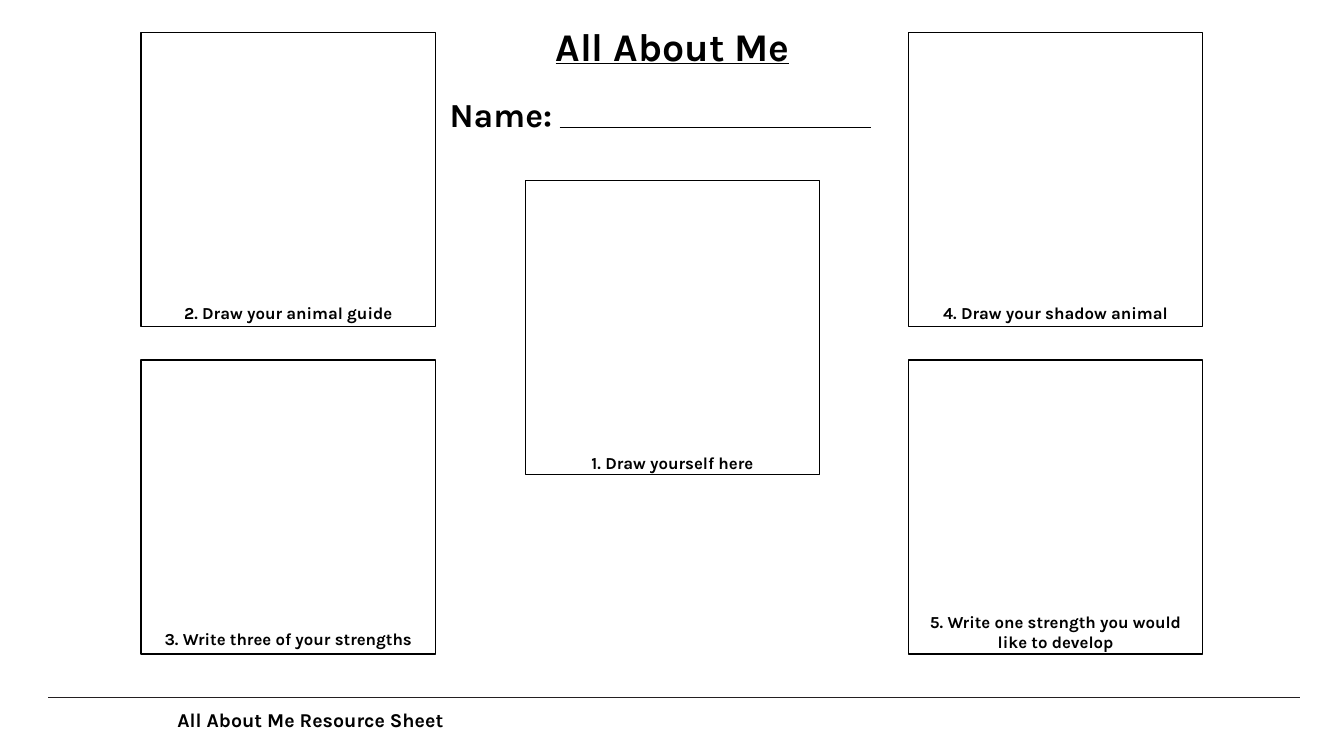
from lxml.etree import SubElement
from pptx import Presentation
from pptx.dml.color import RGBColor
from pptx.enum.shapes import MSO_CONNECTOR, MSO_SHAPE
from pptx.enum.text import MSO_AUTO_SIZE, PP_ALIGN
from pptx.oxml.ns import qn
from pptx.util import Pt

PX = 9144  # 100 px to the inch
COLORS = {"ink": "000000", "rule": "231F20", "paper": "FFFFFF"}
FONT = "Karla"
SIDE = 292  # every panel is a square, and text boxes share its width


def px(*lengths):
    return [n * PX for n in lengths]


def color(name):
    return RGBColor.from_string(COLORS[name])


def add_text(s, text, x, y, h, size=12, underline=None):
    tf = s.shapes.add_textbox(*px(x, y, SIDE, h)).text_frame
    tf.word_wrap = True
    tf.auto_size = MSO_AUTO_SIZE.SHAPE_TO_FIT_TEXT
    p = tf.paragraphs[0]
    p.alignment = PP_ALIGN.CENTER
    r = p.add_run()
    r.text = text
    r.font.name = FONT
    r.font.size = Pt(size)
    r.font.bold = True
    r.font.underline = underline
    r.font.color.rgb = color("ink")


def add_rule(s, x1, x2, y, ink):
    line = s.shapes.add_connector(MSO_CONNECTOR.STRAIGHT, *px(x1, y, x2, y))
    line.line.color.rgb = color(ink)
    line.line.width = Pt(0.5)
    SubElement(line._element.spPr, qn("a:effectLst"))


def add_panel(s, x, y, caption, rise, h=30):
    """Square frame with a caption starting `rise` above its bottom edge."""
    sp = s.shapes.add_shape(MSO_SHAPE.RECTANGLE, *px(x, y, SIDE, SIDE))
    sp.shadow.inherit = False
    sp.fill.solid()
    sp.fill.fore_color.rgb = color("paper")
    sp.line.color.rgb = color("ink")
    sp.line.width = Pt(1)
    add_text(s, caption, x, y + SIDE - rise, h)


def add_header(s, x, y):
    add_text(s, "All About Me", x, y, 57, size=28, underline=True)
    # The trailing space keeps the label clear of the writing line
    add_text(s, "Name: ", x - 166, y + 71, 50, size=24)
    add_rule(s, x + 34, x + 343, y + 109, "ink")


def add_footer(s, x, y):
    add_rule(s, x, x + 1241, y, "rule")
    add_text(s, "All About Me Resource Sheet", x + 114, y + 5, 34, size=14)


def main():
    prs = Presentation()
    prs.slide_width, prs.slide_height = px(1333, 750)
    s = prs.slides.add_slide(prs.slide_layouts[6])

    add_footer(s, 48, 692)

    # Panels: one in the centre, two in each side column
    left, centre, right = 140, 521, 901
    top, bottom = 32, 357
    add_panel(s, centre, 179, "1. Draw yourself here", 27)
    add_panel(s, left, top, "2. Draw your animal guide", 29)
    add_panel(s, left, bottom, "3. Write three of your strengths", 30)
    add_panel(s, right, top, "4. Draw your shadow animal", 29)
    add_panel(s, right, bottom,
              "5. Write one strength you would like to develop", 47, h=50)

    add_header(s, centre, 17)
    prs.save("out.pptx")


if __name__ == "__main__":
    main()
